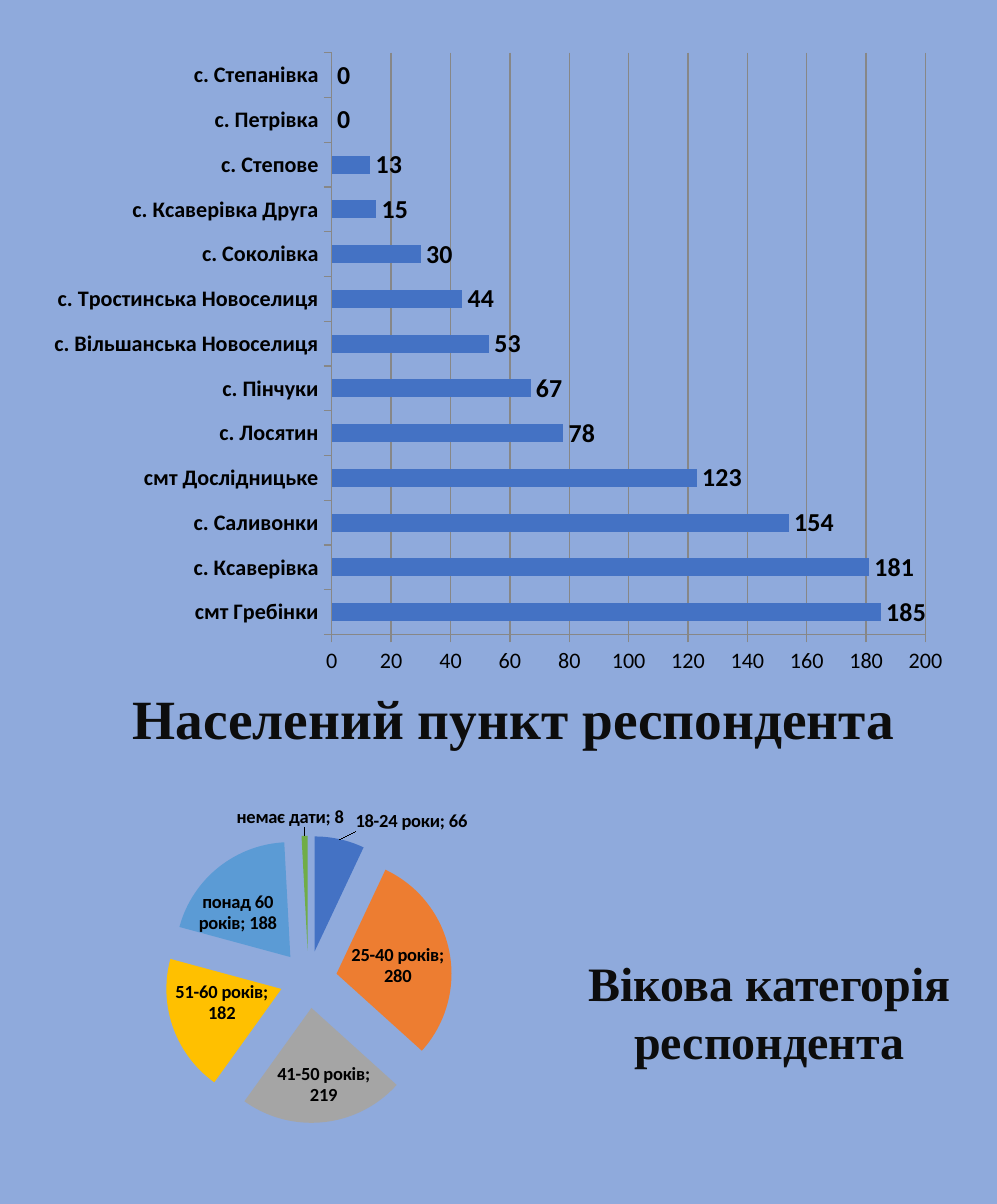
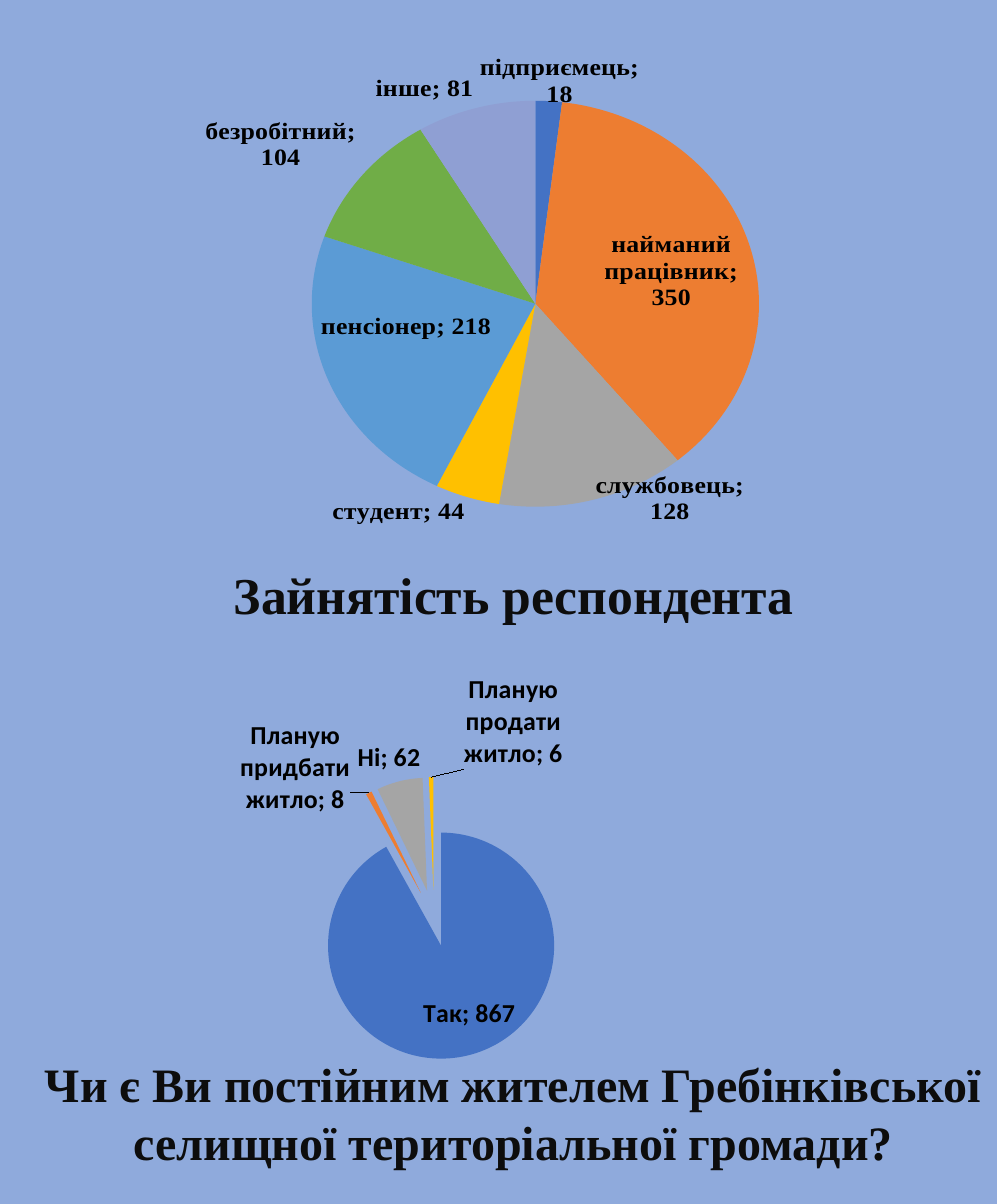
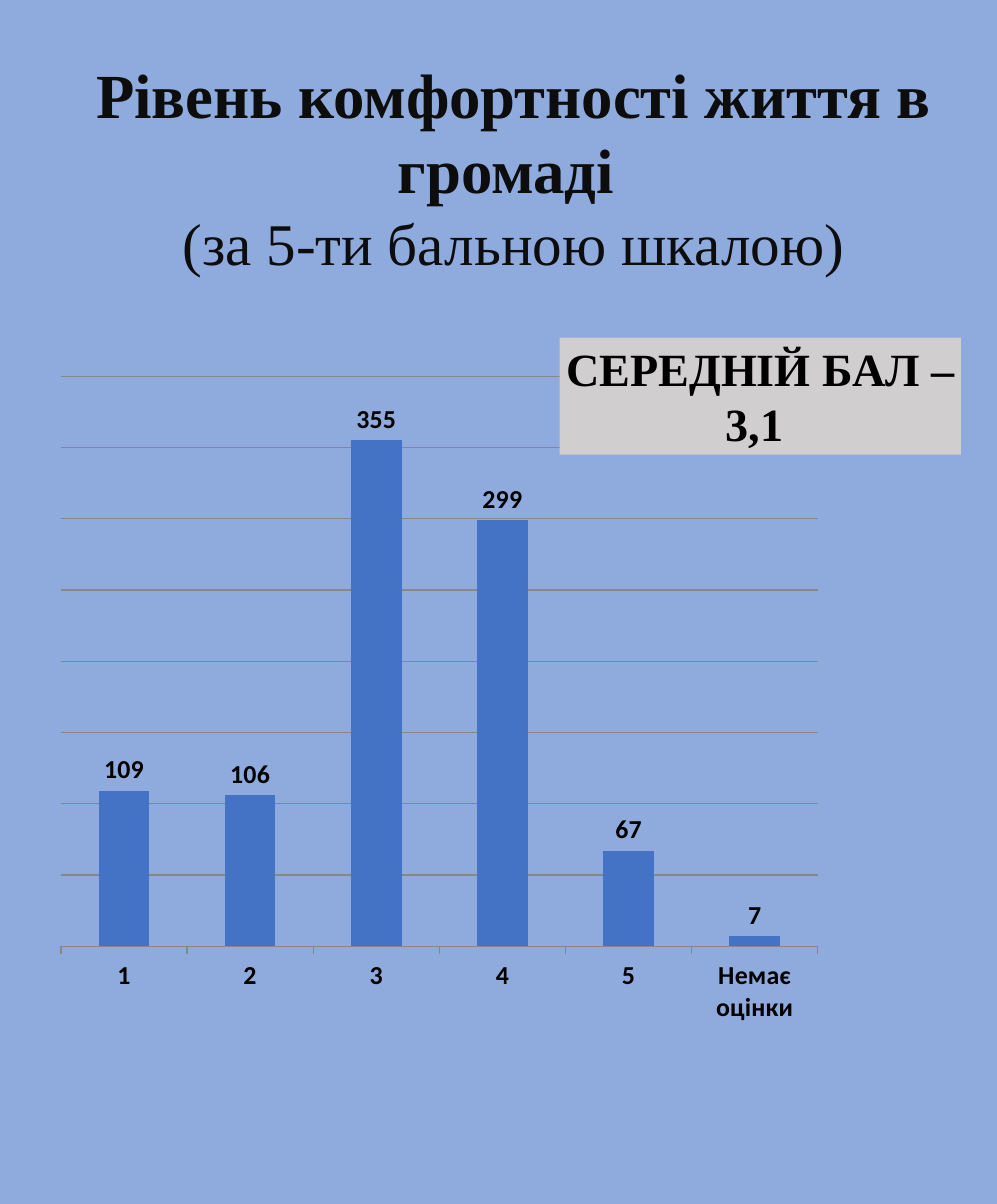
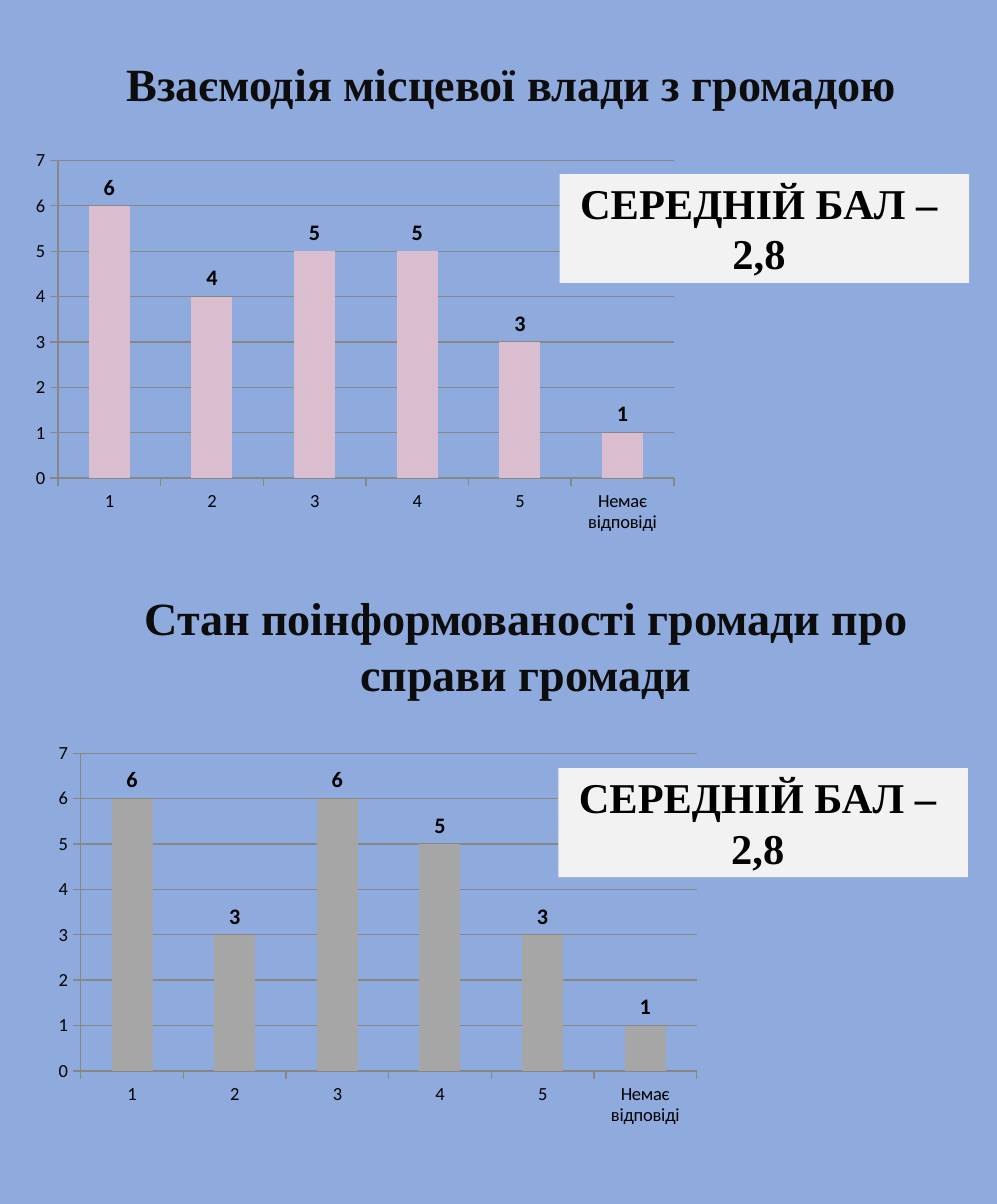
from copy import deepcopy

from pptx import Presentation
from pptx.chart.data import CategoryChartData
from pptx.dml.color import RGBColor
from pptx.enum.chart import XL_CHART_TYPE, XL_LABEL_POSITION, XL_TICK_MARK
from pptx.enum.shapes import MSO_SHAPE
from pptx.enum.text import MSO_ANCHOR, MSO_AUTO_SIZE, PP_ALIGN
from pptx.oxml import parse_xml
from pptx.oxml.ns import nsdecls, qn
from pptx.util import Pt

HUES = {
    "back": "8FAADC", "ink": "0D0D0D", "black": "000000", "white": "FFFFFF",
    "grid": "878787", "blue": "4472C4", "orange": "ED7D31", "gray": "A5A5A5",
    "gold": "FFC000", "sky": "5B9BD5", "green": "70AD47", "lilac": "8F9FD3",
    "pink": "DABECF", "ash": "A6A6A6", "silver": "D0CECE", "pale": "F2F2F2",
}
SLICES = ["blue", "orange", "gray", "gold", "sky", "green", "lilac"]
SERIF, SANS = "Times New Roman", "Calibri"
MARKS = ["1", "2", "3", "4", "5"]

TOWNS = [
    ("смт Гребінки", 185), ("с. Ксаверівка", 181), ("с. Саливонки", 154),
    ("смт Дослідницьке", 123), ("с. Лосятин", 78), ("с. Пінчуки", 67),
    ("с. Вільшанська Новоселиця", 53), ("с. Тростинська Новоселиця", 44),
    ("с. Соколівка", 30), ("с. Ксаверівка Друга", 15), ("с. Степове", 13),
    ("с. Петрівка", 0), ("с. Степанівка", 0),
]
AGES = [
    ("18-24 роки", 66), ("25-40 років", 280), ("41-50 років", 219),
    ("51-60 років", 182), ("понад 60 років", 188), ("немає дати", 8),
]
JOBS = [
    ("підприємець", 18), ("найманий працівник", 350), ("службовець", 128),
    ("студент", 44), ("пенсіонер", 218), ("безробітний", 104), ("інше", 81),
]
HOMES = [
    ("Так", 867), ("Планую придбати житло", 8), ("Ні", 62),
    ("Планую продати житло", 6),
]
COMFORT = list(zip(MARKS + ["Немає оцінки"], [109, 106, 355, 299, 67, 7]))
REPLY = MARKS + ["Немає відповіді"]
CONTACT = list(zip(REPLY, [6, 4, 5, 5, 3, 1]))
NEWS = list(zip(REPLY, [6, 3, 6, 5, 3, 1]))
MEAN = "СЕРЕДНІЙ БАЛ – "

DECK = [
    [
        ("bars", TOWNS, (19.4, 21.6, 501.1, 350.6),
         dict(kind=XL_CHART_TYPE.BAR_CLUSTERED, base=12, size=14, bold=True)),
        ("text", ["Населений пункт респондента"], (36, 369.4, 484.6, 39.6),
         dict(size=30)),
        ("pie", AGES, (12.2, 429.8, 316.1, 192.2),
         dict(area=(0.06, 0.12, 0.86, 0.81), burst=25)),
        ("text", ["Вікова категорія ", "респондента"],
         (313.2, 515.5, 207.4, 66.2), dict(size=26)),
    ],
    [
        ("text", ["Зайнятість респондента"], (36, 303.8, 484.6, 36.7),
         dict(size=28)),
        ("pie", JOBS, (61.2, 22.3, 448.6, 280.8),
         dict(area=(0.24, 0.08, 0.54, 0.9), size=14, face=SERIF)),
        ("pie", HOMES, (14.4, 355, 405.4, 229),
         dict(burst=25, size=14, moves={1: (-0.02, 0.07), 3: (0.11, 0)})),
        ("text", ["Чи є Ви постійним жителем Гребінківської селищної "
                  "територіальної громади?"],
         (14.4, 570.2, 527.8, 66.2), dict(size=26)),
    ],
    [
        ("text", ["Рівень комфортності життя в громаді ",
                  ("(за 5-ти бальною шкалою)", 32, False)],
         (30.2, 28.8, 496.1, 124.6), dict(size=34)),
        ("bars", COMFORT, (24.5, 196.6, 427, 365),
         dict(size=14, bold=True, scale=False, tick=14)),
        ("text", [MEAN, "3,1 "], (303.1, 182.9, 217.4, 63.4),
         dict(size=25, hue="black", fill="silver")),
    ],
    [
        ("text", ["Взаємодія місцевої влади з громадою"],
         (63.4, 28.8, 427, 33.1), dict(size=25)),
        ("text", ["Стан поінформованості громади про справи громади"],
         (71.3, 318.2, 427, 63.4), dict(size=25)),
        ("bars", CONTACT, (12.2, 77, 360, 216), dict(hue="pink")),
        ("text", [MEAN, "2,8 "], (303.1, 94.3, 221.8, 59),
         dict(size=23, hue="black", fill="pale")),
        ("bars", NEWS, (24.5, 398.2, 360, 216), dict(hue="ash")),
        ("text", [MEAN, "2,8 "], (302.4, 416.2, 221.8, 59),
         dict(size=23, hue="black", fill="pale")),
    ],
]


def color(name):
    return RGBColor.from_string(HUES[name])


def paint(fill, name):
    fill.solid()
    fill.fore_color.rgb = color(name)


def style(font, size, hue="black", bold=False, face=SANS):
    font.size, font.bold, font.name = Pt(size), bold, face
    font.color.rgb = color(hue)


def text(slide, lines, box, size, hue="ink", fill=None):
    place = [Pt(n) for n in box]
    if fill:
        shape = slide.shapes.add_shape(MSO_SHAPE.RECTANGLE, *place)
        shape.shadow.inherit = False
        paint(shape.fill, fill)
        shape.line.fill.background()
    else:
        shape = slide.shapes.add_textbox(*place)
    frame = shape.text_frame
    frame.word_wrap = True
    frame.auto_size = MSO_AUTO_SIZE.SHAPE_TO_FIT_TEXT
    frame.vertical_anchor = MSO_ANCHOR.TOP
    frame.margin_left = frame.margin_right = Pt(2.7)
    frame.margin_top = frame.margin_bottom = Pt(1.35)
    for i, line in enumerate(lines):
        words, high, bold = (line, size, True) if isinstance(line, str) else line
        para = frame.paragraphs[0] if i == 0 else frame.add_paragraph()
        para.alignment = PP_ALIGN.CENTER
        run = para.add_run()
        run.text = words
        style(run.font, high, hue, bold, SERIF)
        edge = parse_xml(
            f'<a:ln {nsdecls("a")} w="13462"><a:solidFill>'
            f'<a:srgbClr val="{HUES["white"]}"/></a:solidFill></a:ln>')
        run.font._element.insert(0, edge)


def graph(slide, kind, rows, box, base):
    data = CategoryChartData()
    data.categories = [name for name, _ in rows]
    data.add_series("Series 1", [value for _, value in rows])
    chart = slide.shapes.add_chart(kind, *[Pt(n) for n in box], data).chart
    chart.has_legend = chart.has_title = False
    style(chart.font, base)
    return chart, chart.plots[0], chart.plots[0].series[0]


def bars(slide, rows, box, kind=XL_CHART_TYPE.COLUMN_CLUSTERED, base=10,
         size=12, bold=False, scale=True, tick=None, hue="blue"):
    chart, plot, series = graph(slide, kind, rows, box, base)
    plot.gap_width = 150
    plot.vary_by_categories = False
    paint(series.format.fill, hue)
    series.invert_if_negative = False
    labels = series.data_labels
    labels.show_value = True
    labels.position = XL_LABEL_POSITION.OUTSIDE_END
    style(labels.font, size, bold=True)
    low, side = chart.category_axis, chart.value_axis
    low.has_major_gridlines = False
    side.has_major_gridlines = True
    for axis in (low, side):
        axis.major_tick_mark = XL_TICK_MARK.OUTSIDE
        axis.minor_tick_mark = XL_TICK_MARK.NONE
    for part in (low, side, side.major_gridlines):
        part.format.line.color.rgb = color("grid")
        part.format.line.width = Pt(0.75)
    style(low.tick_labels.font, tick or base, bold=bold)
    side.visible = scale


def layout(spot, inner=False):
    head = '<c:layoutTarget val="inner"/>' if inner else ""
    if inner:
        head += '<c:xMode val="edge"/><c:yMode val="edge"/>'
    body = "".join(f'<c:{k} val="{v}"/>' for k, v in zip("xywh", spot))
    return parse_xml(f'<c:layout {nsdecls("c")}><c:manualLayout>'
                     f'{head}{body}</c:manualLayout></c:layout>')


def pie(slide, rows, box, area=None, burst=0, size=10, face=SANS, moves=None):
    chart, plot, series = graph(slide, XL_CHART_TYPE.PIE, rows, box, 10)
    plot.vary_by_categories = True
    for i, hue in enumerate(SLICES[:len(rows)]):
        paint(series.points[i].format.fill, hue)
    if burst:
        series._element.find(qn("c:dPt")).addprevious(
            parse_xml(f'<c:explosion {nsdecls("c")} val="{burst}"/>'))
    labels = series.data_labels
    labels.show_value = labels.show_category_name = True
    labels.show_percentage = False
    labels.position = XL_LABEL_POSITION.BEST_FIT
    style(labels.font, size, bold=True, face=face)
    root = labels._element
    root.find(qn("c:showBubbleSize")).addnext(
        parse_xml(f'<c:separator {nsdecls("c")}>; </c:separator>'))
    shared = [x for x in root if x.tag != qn("c:showLeaderLines")]
    for i, (key, shift) in enumerate((moves or {}).items()):
        label = parse_xml(
            f'<c:dLbl {nsdecls("c")}><c:idx val="{key}"/></c:dLbl>')
        label.append(layout(shift))
        label.extend([deepcopy(x) for x in shared])
        root.insert(i, label)
    if area:
        field = chart._chartSpace.find(".//" + qn("c:plotArea"))
        for old in field.findall(qn("c:layout")):
            field.remove(old)
        field.insert(0, layout(area, True))


def main():
    show = Presentation()
    show.slide_width, show.slide_height = Pt(540), Pt(652.32)
    paint(show.slide_master.background.fill, "back")
    draw = {"text": text, "bars": bars, "pie": pie}
    for items in DECK:
        slide = show.slides.add_slide(show.slide_layouts[6])
        for kind, content, box, form in items:
            draw[kind](slide, content, box, **form)
    show.save("out.pptx")


if __name__ == "__main__":
    main()
